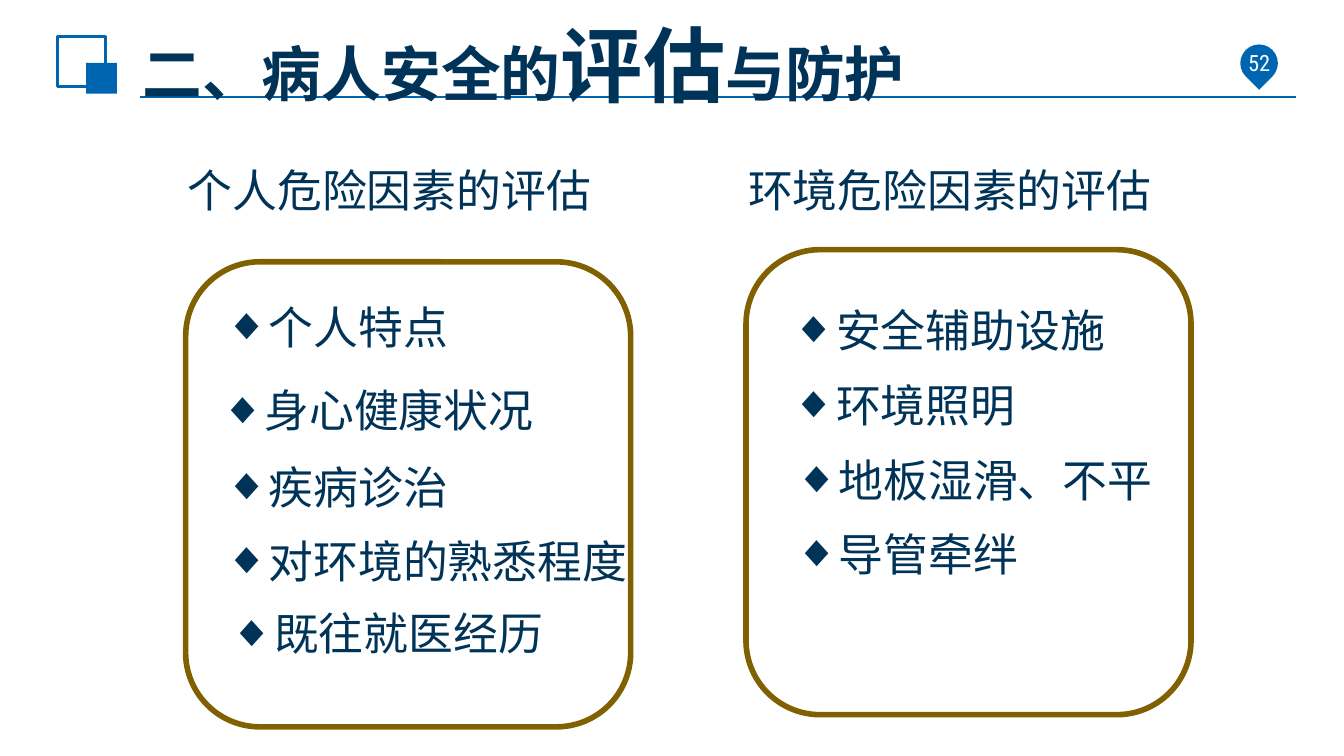
from lxml.etree import SubElement
from pptx import Presentation
from pptx.dml.color import RGBColor
from pptx.enum.shapes import MSO_CONNECTOR, MSO_SHAPE as SHAPE
from pptx.enum.text import MSO_ANCHOR as ANCHOR, MSO_AUTO_SIZE as AUTO, PP_ALIGN as ALIGN
from pptx.oxml.ns import qn
from pptx.util import Cm, Pt

NAVY, BLUE, GOLD, WHITE = "003358", "0065B0", "806000", "FFFFFF"
TITLE = [("二、病人安全的", 32), ("评估", 44), ("与防护", 32)]
PAGE = "52"
COLUMNS = [
    {"heading": "个人危险因素的评估", "left": 3.3, "frame_top": 4.95,
     "items": [("个人特点", 3.99, 5.54), ("身心健康状况", 3.91, 7.11),
               ("疾病诊治", 3.99, 8.56), ("对环境的熟悉程度", 3.99, 9.96),
               ("既往就医经历", 4.09, 11.33)]},
    {"heading": "环境危险因素的评估", "left": 13.89, "frame_top": 4.72,
     "items": [("安全辅助设施", 14.71, 5.59), ("环境照明", 14.71, 7.01),
               ("地板湿滑、不平", 14.76, 8.43), ("导管牵绊", 14.76, 9.83)]},
]


def color(value):
    return RGBColor.from_string(value)


def write(p, text, size=24, font="Arial", fill=NAVY, bold=False):
    r = p.add_run()
    r.text = text
    r.font.size, r.font.name, r.font.bold = Pt(size), font, bold
    r.font.color.rgb = color(fill)


def add_bullet(p, indent=0.79):
    pPr = p._p.get_or_add_pPr()
    pPr.set("marL", str(Cm(indent)))
    pPr.set("indent", str(Cm(-indent)))
    SubElement(pPr, qn("a:buFont"), typeface="Arial")
    SubElement(pPr, qn("a:buChar"), char="◆")


def add_text(s, text, box, wrap=True, bullet=False, align=ALIGN.LEFT,
             anchor=ANCHOR.TOP, auto=AUTO.SHAPE_TO_FIT_TEXT, **fmt):
    tf = s.shapes.add_textbox(*map(Cm, box)).text_frame
    tf.word_wrap, tf.auto_size, tf.vertical_anchor = wrap, auto, anchor
    p = tf.paragraphs[0]
    p.alignment = align
    if bullet:
        add_bullet(p)
    write(p, text, **fmt)


def add_shape(s, kind, box, fill=None, line=None, width=1.5):
    sp = s.shapes.add_shape(kind, *map(Cm, box))
    sp.shadow.inherit = False
    if fill:
        sp.fill.solid()
        sp.fill.fore_color.rgb = color(fill)
    else:
        sp.fill.background()
    if line:
        sp.line.color.rgb = color(line)
        sp.line.width = Pt(width)
    else:
        sp.line.fill.background()
    return sp


def add_header(s):
    rule = s.shapes.add_connector(MSO_CONNECTOR.STRAIGHT, Cm(2.64), Cm(1.83), Cm(24.49), Cm(1.83))
    rule.line.color.rgb = color(BLUE)
    rule.line.width = Pt(1.25)
    SubElement(rule._element.spPr, qn("a:effectLst"))
    add_shape(s, SHAPE.RECTANGLE, (1.09, 0.69, 0.91, 0.94), line=BLUE)
    add_shape(s, SHAPE.RECTANGLE, (1.63, 1.19, 0.58, 0.58), fill=BLUE)
    add_shape(s, SHAPE.TEAR, (23.44, 0.84, 0.71, 0.71), fill=BLUE).rotation = 135
    add_text(s, PAGE, (22.2, 0.76, 3.2, 0.84), align=ALIGN.CENTER, anchor=ANCHOR.MIDDLE,
             auto=AUTO.NONE, size=12, font="Roboto Condensed", fill=WHITE)

    title = s.shapes.title
    title.left, title.top, title.width, title.height = map(Cm, (2.51, 0.74, 16.38, 0.91))
    tf = title.text_frame
    tf.word_wrap, tf.auto_size, tf.vertical_anchor = True, AUTO.NONE, ANCHOR.MIDDLE
    tf.margin_left = tf.margin_right = Cm(0.18)
    tf.margin_top = tf.margin_bottom = Cm(0.1)
    p = tf.paragraphs[0]
    p.alignment = ALIGN.LEFT
    for text, size in TITLE:
        write(p, text, size=size, bold=True)
    s.shapes._spTree.append(title._element)


def add_column(s, heading, left, frame_top, items):
    add_text(s, heading, (left, 2.95, 8.61, 1.27))
    add_shape(s, SHAPE.ROUNDED_RECTANGLE, (left + 0.21, frame_top, 8.41, 8.79), line=GOLD, width=3)
    for text, x, y in items:
        add_text(s, text, (x, y, 1.37 + 0.85 * len(text), 1.27), wrap=False, bullet=True)


def main():
    """Build the patient safety assessment slide."""
    prs = Presentation()
    prs.slide_width, prs.slide_height = Cm(25.4), Cm(14.29)
    s = prs.slides.add_slide(prs.slide_layouts[5])
    add_header(s)
    for column in COLUMNS:
        add_column(s, **column)
    prs.save("out.pptx")


if __name__ == "__main__":
    main()
